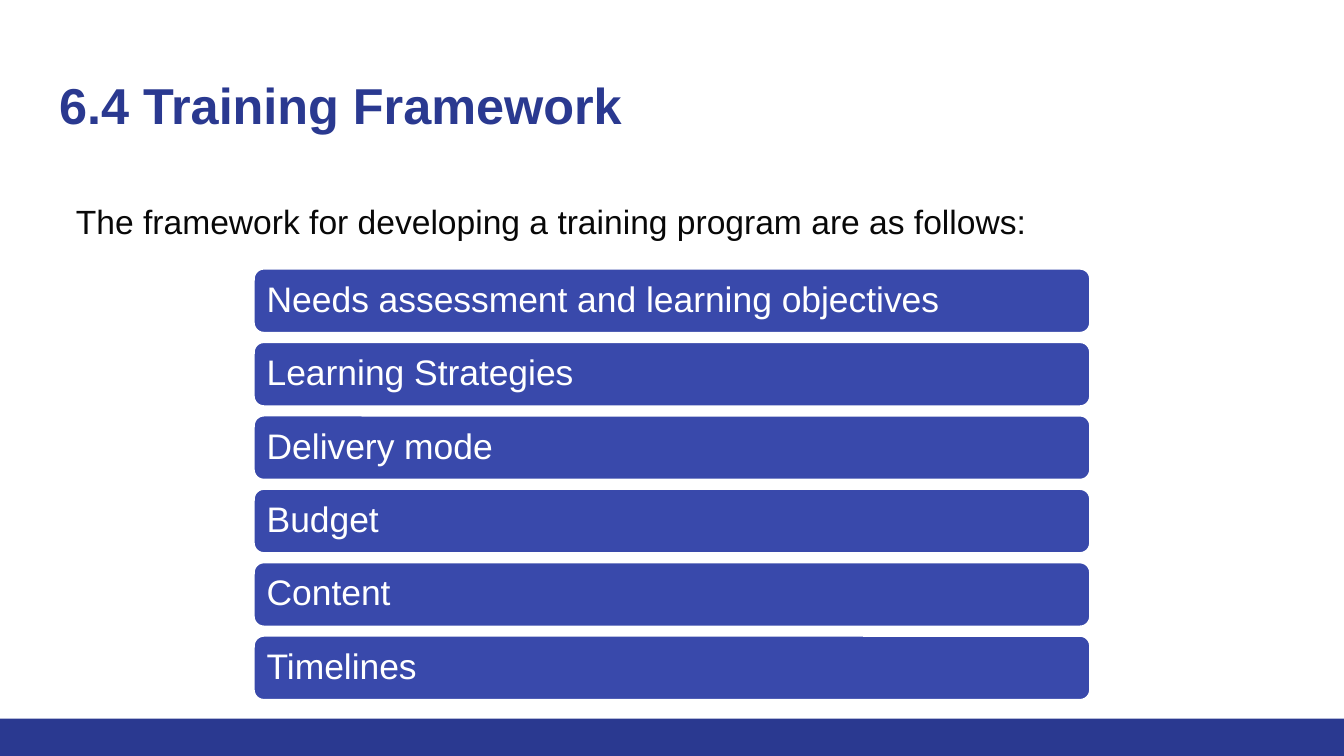
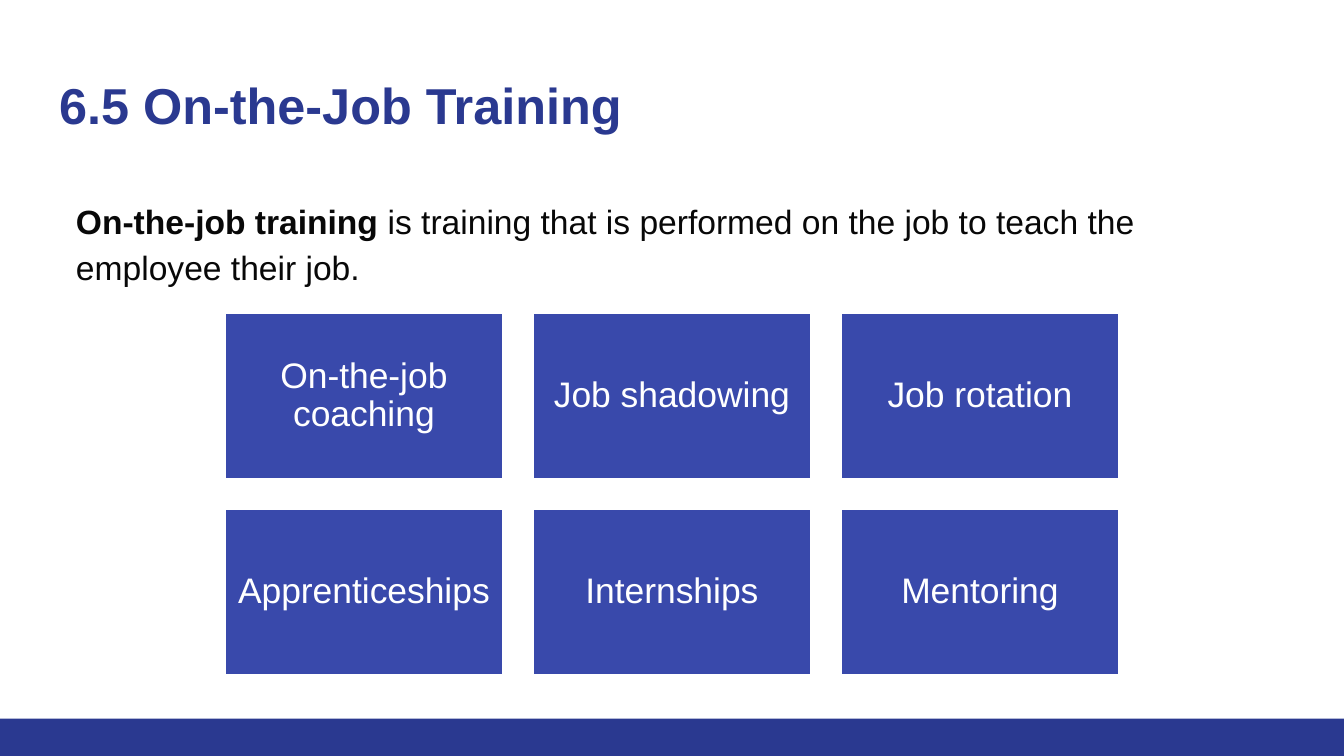
from pptx import Presentation
from pptx.dml.color import RGBColor
from pptx.enum.shapes import MSO_SHAPE
from pptx.enum.text import MSO_ANCHOR, MSO_AUTO_SIZE, PP_ALIGN
from pptx.oxml.ns import qn
from pptx.util import Pt

RECT, ROUNDED = MSO_SHAPE.RECTANGLE, MSO_SHAPE.ROUNDED_RECTANGLE
TOP, MIDDLE = MSO_ANCHOR.TOP, MSO_ANCHOR.MIDDLE
LEFT, CENTER = PP_ALIGN.LEFT, PP_ALIGN.CENTER
NO_FIT = MSO_AUTO_SIZE.NONE

COLORS = {"navy": "2A3990", "tile": "3949AB", "ink": "080808", "white": "FFFFFF"}
FONTS = {
    "title": {"size": Pt(27), "bold": True, "name": "Arial"},
    "body": {"size": Pt(18), "bold": False, "name": "Arial"},
    "tile": {"size": Pt(19), "bold": False, "name": "Arial"},
}

# Boxes: left, top, width, height in points
SLIDE_W, SLIDE_H = 720, 405
FOOTER = (0, 385, SLIDE_W, 20)
TITLE = (24.5, 32.3, 671, 47.7)
BODY = (24.5, 97, 671, 263)
STEPS = (135.5, 143.5, 449, 232)
METHODS = (120, 167, 480, 195)


def rgb(name):
    return RGBColor.from_string(COLORS[name])


def set_attrs(obj, values):
    for key, value in values.items():
        setattr(obj, key, value)


def place(sp, box):
    set_attrs(sp, dict(zip(("left", "top", "width", "height"), map(Pt, box))))


def set_frame(tf, anchor, inset):
    set_attrs(tf, {"word_wrap": True, "auto_size": NO_FIT, "vertical_anchor": anchor})
    for side in ("left", "top", "right", "bottom"):
        setattr(tf, f"margin_{side}", Pt(inset))


def write(p, runs, style, color, align=LEFT, spacing=1.0):
    """Fill a paragraph with (text, format overrides) runs."""
    set_attrs(p, {"alignment": align, "line_spacing": spacing, "space_before": Pt(0)})
    for text, extra in runs:
        r = p.add_run()
        r.text = text
        set_attrs(r.font, {**FONTS[style], **extra})
        r.font.color.rgb = rgb(color)


def add_block(s, shape, box, fill):
    sp = s.shapes.add_shape(shape, *map(Pt, box))
    sp.shadow.inherit = False
    sp.fill.solid()
    sp.fill.fore_color.rgb = rgb(fill)
    sp.line.fill.background()
    return sp


def add_tile(s, shape, box, text, align):
    sp = add_block(s, shape, box, "tile")
    sp.line.color.rgb = rgb("white")
    sp.line.width = Pt(2)
    tf = sp.text_frame
    set_frame(tf, MIDDLE, 5.7)
    write(tf.paragraphs[0], [(text, {})], "tile", "white", align, 0.9)


def add_base_slide(prs, title, intro):
    """Slide with footer band, title and introductory paragraph."""
    s = prs.slides.add_slide(prs.slide_layouts[1])
    # Footer band
    add_block(s, RECT, FOOTER, "navy")
    # Title
    place(s.shapes.title, TITLE)
    tf = s.shapes.title.text_frame
    set_frame(tf, TOP, 7.2)
    write(tf.paragraphs[0], [(title, {})], "title", "navy")
    # Introduction, without a bullet
    body = s.placeholders[1]
    place(body, BODY)
    tf = body.text_frame
    set_frame(tf, TOP, 7.2)
    p = tf.paragraphs[0]
    pPr = p._p.get_or_add_pPr()
    pPr.set("marL", str(Pt(9)))
    pPr.set("indent", "0")
    pPr.append(pPr.makeelement(qn("a:buNone"), {}))
    write(p, intro, "body", "ink", spacing=1.15)
    return s


def add_grid(s, box, labels, cols, gap, shape, align):
    """Equal tiles that fill the box row by row."""
    left, top, width, height = box
    rows = len(labels) // cols
    w = (width - gap * (cols - 1)) / cols
    h = (height - gap * (rows - 1)) / rows
    for i, label in enumerate(labels):
        row, col = divmod(i, cols)
        cell = (left + col * (w + gap), top + row * (h + gap), w, h)
        add_tile(s, shape, cell, label, align)


def framework_slide(prs):
    s = add_base_slide(prs, "6.4 Training Framework", [
        ("The framework for developing a training program are as follows:", {})])
    steps = ["Needs assessment and learning objectives", "Learning Strategies",
             "Delivery mode", "Budget", "Content", "Timelines"]
    add_grid(s, STEPS, steps, 1, 4, ROUNDED, LEFT)


def on_the_job_slide(prs):
    s = add_base_slide(prs, "6.5 On-the-Job Training", [
        ("On-the-job training", {"bold": True}),
        (" is training that is performed on the job to teach the employee their job.", {})])
    methods = ["On-the-job coaching", "Job shadowing", "Job rotation",
               "Apprenticeships", "Internships", "Mentoring"]
    add_grid(s, METHODS, methods, 3, 15, RECT, CENTER)


def main():
    prs = Presentation()
    prs.slide_width, prs.slide_height = Pt(SLIDE_W), Pt(SLIDE_H)
    framework_slide(prs)
    on_the_job_slide(prs)
    prs.save("out.pptx")


if __name__ == "__main__":
    main()
